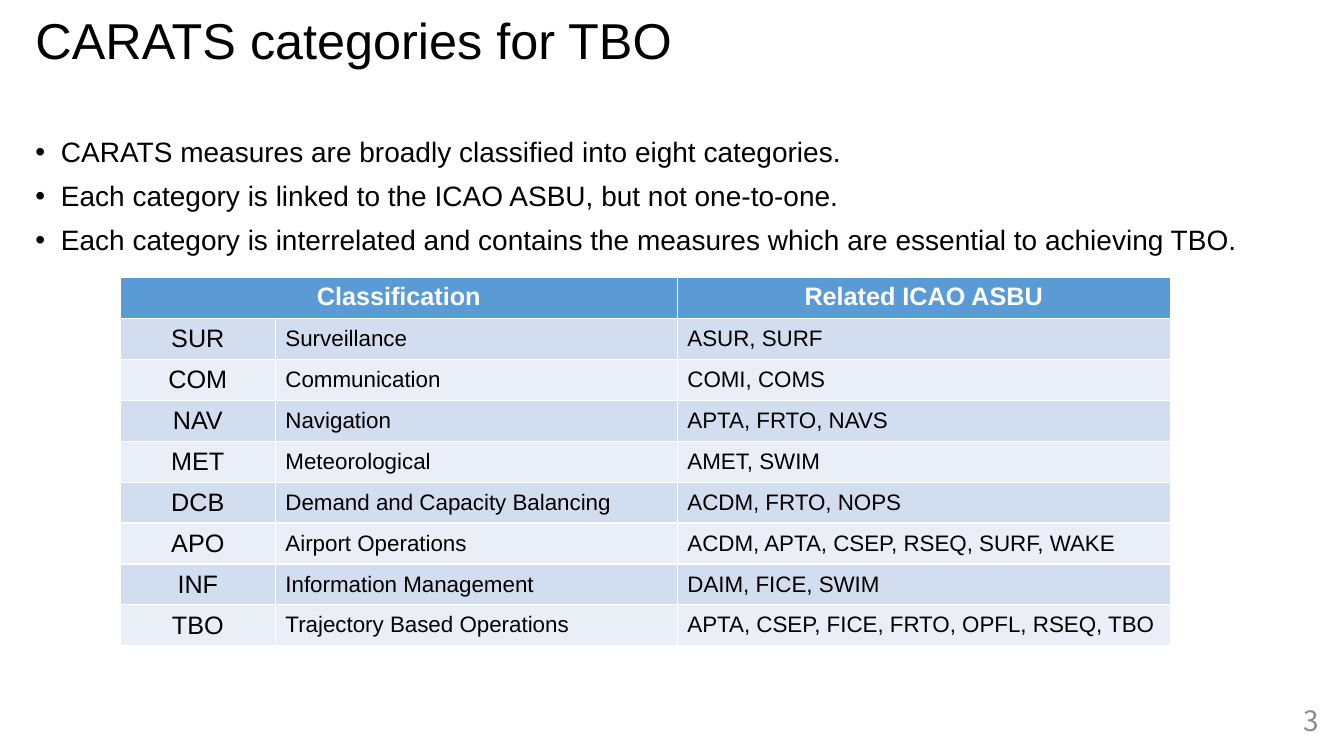
import pptx
import pptx.dml.color
import pptx.enum.text
import pptx.oxml
import pptx.oxml.ns
import pptx.util
from pptx.util import Cm

BLACK = pptx.dml.color.RGBColor(0x00, 0x00, 0x00)
WHITE = pptx.dml.color.RGBColor(0xFF, 0xFF, 0xFF)
GREY = pptx.dml.color.RGBColor(0x8C, 0x8C, 0x8C)
HEADER_BLUE = pptx.dml.color.RGBColor(0x5B, 0x9B, 0xD5)
BAND_DARK = pptx.dml.color.RGBColor(0xD2, 0xDE, 0xEF)
BAND_LIGHT = pptx.dml.color.RGBColor(0xEA, 0xEF, 0xF7)

LEFT = pptx.enum.text.PP_ALIGN.LEFT
CENTER = pptx.enum.text.PP_ALIGN.CENTER
RIGHT = pptx.enum.text.PP_ALIGN.RIGHT
MIDDLE = pptx.enum.text.MSO_ANCHOR.MIDDLE
TOP = pptx.enum.text.MSO_ANCHOR.TOP

BULLETS = [
    "CARATS measures are broadly classified into eight categories.",
    "Each category is linked to the ICAO ASBU, but not one-to-one.",
    "Each category is interrelated and contains the measures which are essential to achieving TBO.",
]
ROWS = [
    ("Classification", "", "Related ICAO ASBU"),
    ("SUR", "Surveillance", "ASUR, SURF"),
    ("COM", "Communication", "COMI, COMS"),
    ("NAV", "Navigation", "APTA, FRTO, NAVS"),
    ("MET", "Meteorological", "AMET, SWIM"),
    ("DCB", "Demand and Capacity Balancing", "ACDM, FRTO, NOPS"),
    ("APO", "Airport Operations", "ACDM, APTA, CSEP, RSEQ, SURF, WAKE"),
    ("INF", "Information Management", "DAIM, FICE, SWIM"),
    ("TBO", "Trajectory Based Operations", "APTA, CSEP, FICE, FRTO, OPFL, RSEQ, TBO"),
]
COLUMN_WIDTHS = [Cm(3.91), Cm(10.13), Cm(12.42)]
ROW_HEIGHT = Cm(1.03)


def format_paragraph(paragraph, size, color, alignment=LEFT, bold=False, font_name="Arial"):
    paragraph.alignment = alignment
    for run in paragraph.runs:
        run.font.name = font_name
        run.font.size = pptx.util.Pt(size)
        run.font.bold = bold
        run.font.color.rgb = color


def place(shape, left, top, width, height, anchor):
    shape.left, shape.top, shape.width, shape.height = left, top, width, height
    shape.text_frame.word_wrap = True
    shape.text_frame.auto_size = pptx.enum.text.MSO_AUTO_SIZE.NONE
    shape.text_frame.vertical_anchor = anchor


presentation = pptx.Presentation()
presentation.slide_width = Cm(33.87)
presentation.slide_height = Cm(19.05)
slide = presentation.slides.add_slide(presentation.slide_layouts[1])

title = slide.shapes.title
place(title, Cm(0.64), Cm(0.25), Cm(29.21), Cm(1.68), MIDDLE)
title.text_frame.text = "CARATS categories for TBO"
title.text_frame.paragraphs[0].line_spacing = 0.9
format_paragraph(title.text_frame.paragraphs[0], 36, BLACK)

body = slide.placeholders[1]
place(body, Cm(0.64), Cm(3.35), Cm(31.04), Cm(3.63), TOP)
body.text_frame.text = "\n".join(BULLETS)
for index, paragraph in enumerate(body.text_frame.paragraphs):
    paragraph.line_spacing = 0.9
    paragraph.space_before = pptx.util.Pt(10 if index else 0)
    properties = paragraph._p.get_or_add_pPr()
    properties.set("marL", str(Cm(0.64)))
    properties.set("indent", str(-Cm(0.64)))
    for tag, name, value in (("a:buFont", "typeface", "Arial"), ("a:buChar", "char", "•")):
        bullet = pptx.oxml.parse_xml(f'<{tag} {pptx.oxml.ns.nsdecls("a")} {name}="{value}"/>')
        properties.append(bullet)
    format_paragraph(paragraph, 20, BLACK)

page_number = slide.shapes.add_textbox(0, 0, 0, 0)
place(page_number, Cm(25.86), Cm(17.65), Cm(7.62), Cm(1.02), MIDDLE)
page_number.text_frame.text = "3"
format_paragraph(page_number.text_frame.paragraphs[0], 20, GREY, RIGHT, font_name="Noto Sans CJK JP")

table = slide.shapes.add_table(
    len(ROWS), len(COLUMN_WIDTHS), Cm(3.03), Cm(7), sum(COLUMN_WIDTHS), ROW_HEIGHT * len(ROWS)
).table
for column, width in zip(table.columns, COLUMN_WIDTHS):
    column.width = width
table.cell(0, 0).merge(table.cell(0, 1))
for row_index, texts in enumerate(ROWS):
    is_header = row_index == 0
    table.rows[row_index].height = ROW_HEIGHT
    for column_index, text in enumerate(texts):
        cell = table.cell(row_index, column_index)
        cell.fill.solid()
        band = BAND_DARK if row_index % 2 else BAND_LIGHT
        cell.fill.fore_color.rgb = HEADER_BLUE if is_header else band
        cell.vertical_anchor = TOP if is_header else MIDDLE
        if cell.is_spanned:
            continue
        cell.text_frame.text = text
        is_large = is_header or column_index == 0
        format_paragraph(
            cell.text_frame.paragraphs[0],
            18 if is_large else 16,
            WHITE if is_header else BLACK,
            CENTER if is_large else LEFT,
            bold=is_header,
        )

presentation.save("out.pptx")
